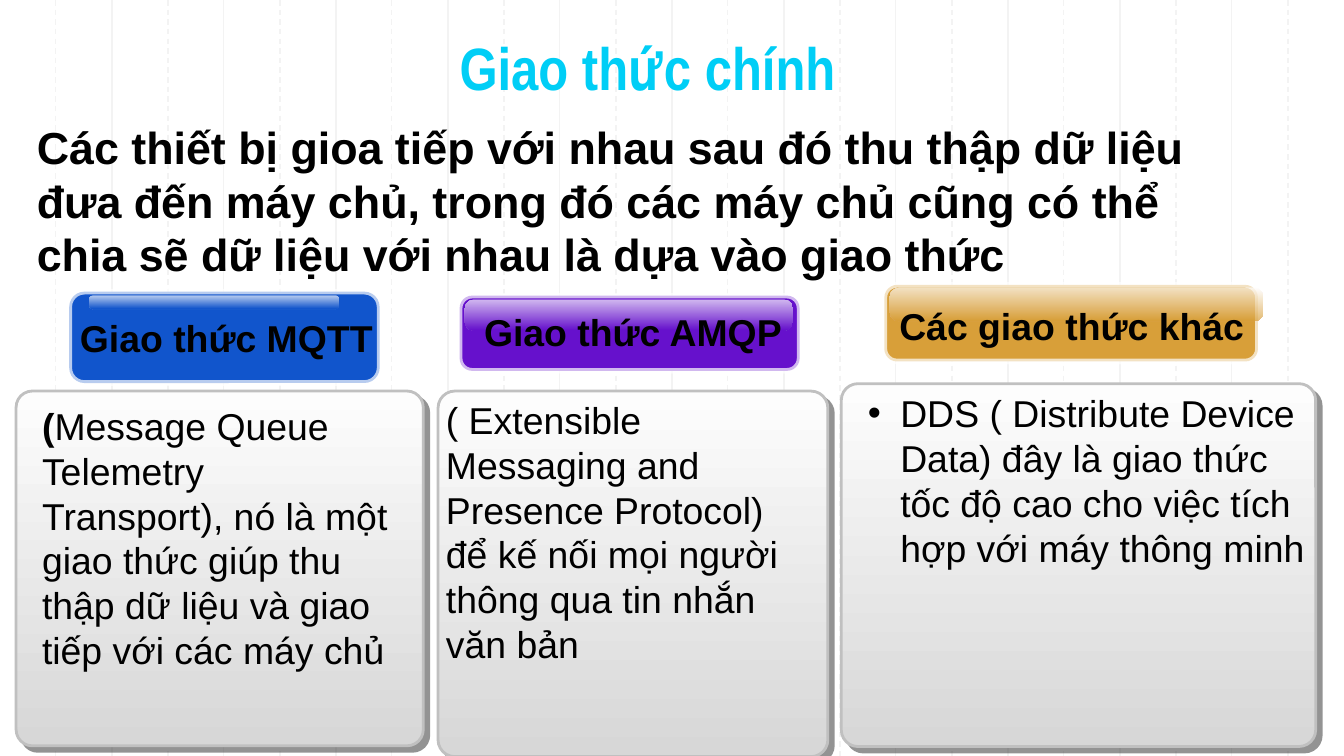
import pptx
import pptx.util
import pptx.dml.color
import pptx.enum.dml
import pptx.enum.shapes
import pptx.enum.text
import pptx.oxml
import pptx.oxml.ns
import lxml.etree

PX = 4572  # 200 px to the inch
W, H = 2000, 1125
GRID_STEPS = 24
BLACK = "000000"
ALIGN = pptx.enum.text.PP_ALIGN

# Cards are in slide px; button, gloss, label and body are relative to the card.
COLUMNS = [
    dict(card=(24, 582, 606, 528), color="1155CC",
         button=(79, -148, 462, 136), gloss=(109, -142, 372, 20),
         label=(70, -123, 486, 88), title="Giao thức MQTT",
         body=(19, 8, 560, 424),
         runs=[("(", True),
               ("Message Queue Telemetry Transport), nó là một giao thức giúp thu "
                "thập dữ liệu và giao tiếp với các máy chủ", False)]),
    dict(card=(652, 582, 580, 544), color="6611CC",
         button=(32, -142, 506, 112), gloss=(40, -136, 488, 46),
         label=(42, -132, 496, 88), title="Giao thức AMQP",
         body=(-8, -1, 580, 424),
         runs=[("( Extensible Messaging and Presence Protocol) để kế nối mọi người "
                "thông qua tin nhắn văn bản", False)]),
    dict(card=(1252, 571, 706, 540), color="D89F39",
         button=(64, -147, 556, 114), gloss=(72, -143, 556, 50),
         label=(64, -130, 558, 88), title="Các giao thức khác", wrap=False,
         body=(20, 0, 704, 390), bullet=True,
         runs=[("DDS ( Distribute Device Data) đây là giao thức tốc độ cao cho việc "
                "tích hợp với máy thông minh", False)]),
]


def rgb(value):
    return pptx.dml.color.RGBColor.from_string(value)


def emu(box):
    return [pptx.util.Emu(v * PX) for v in box]


def sub(parent, tag, **attrs):
    el = lxml.etree.SubElement(parent, pptx.oxml.ns.qn(tag))
    for name, value in attrs.items():
        el.set(name, str(value))
    return el


def set_opacity(parent, percent):
    """Apply an opacity to every RGB colour below parent."""
    for clr in parent.iter(pptx.oxml.ns.qn("a:srgbClr")):
        sub(clr, "a:alpha", val=percent * 1000)


def fill_gradient(sp, top, bottom):
    sp.fill.gradient()
    sp.fill.gradient_angle = 270
    for stop, color, position in zip(sp.fill.gradient_stops, (top, bottom), (0, 1)):
        stop.color.rgb = rgb(color)
        stop.position = position


def add_round_rect(slide, box, radius):
    sp = slide.shapes.add_shape(
        pptx.enum.shapes.MSO_SHAPE.ROUNDED_RECTANGLE, *emu(box))
    sp.adjustments[0] = radius
    sp.shadow.inherit = False
    return sp


def add_runs(p, runs, size, color=BLACK, font="Arial"):
    for text, bold in runs:
        r = p.add_run()
        r.text = text
        r.font.name = font
        r.font.size = pptx.util.Pt(size)
        r.font.bold = bold
        r.font.color.rgb = rgb(color)


def add_text(slide, box, runs, size, align=ALIGN.LEFT, wrap=True, bullet=False):
    tf = slide.shapes.add_textbox(*emu(box)).text_frame
    tf.word_wrap = wrap
    p = tf.paragraphs[0]
    p.alignment = align
    if bullet:
        pPr = p._p.get_or_add_pPr()
        pPr.set("marL", str(48 * PX))
        pPr.set("indent", str(-48 * PX))
        sub(pPr, "a:buFont", typeface="Arial")
        sub(pPr, "a:buChar", char="•")
    add_runs(p, runs, size)


def add_grid(slide):
    """Vertical background lines, solid and dashed in turn."""
    for i in range(1, GRID_STEPS):
        x = round(i * W / GRID_STEPS)
        line = slide.shapes.add_connector(
            pptx.enum.shapes.MSO_CONNECTOR.STRAIGHT, *emu((x, 0, x, H)))
        line.line.color.rgb = rgb("F3F3F3")
        line.line.width = pptx.util.Pt(0.75)
        if i % 2:
            line.line.dash_style = pptx.enum.dml.MSO_LINE.DASH
        sub(line._element.spPr, "a:effectLst")


def add_title(slide, box, text):
    title = slide.shapes.title
    slide.shapes._spTree.append(title._element)  # in front of the grid
    title.left, title.top, title.width, title.height = emu(box)
    tf = title.text_frame
    tf.auto_size = pptx.enum.text.MSO_AUTO_SIZE.NONE
    tf.vertical_anchor = pptx.enum.text.MSO_ANCHOR.BOTTOM
    tf.margin_left = tf.margin_top = tf.margin_right = tf.margin_bottom = 20 * PX
    tf.paragraphs[0].alignment = ALIGN.CENTER
    add_runs(tf.paragraphs[0], [(text, True)], 32, "00CEF6", "Arial Narrow")


def add_card(slide, box):
    card = add_round_rect(slide, box, 0.046)
    fill_gradient(card, "FDFDFD", "D7D7D7")
    card.line.color.rgb = rgb("C0C0C0")
    card.line.width = pptx.util.Pt(1.5)
    effects = card._element.spPr.find(pptx.oxml.ns.qn("a:effectLst"))
    shadow = sub(effects, "a:outerShdw", blurRad=0, dist=pptx.util.Pt(4.2),
                 dir=45 * 60000, algn="ctr", rotWithShape=0)
    sub(shadow, "a:srgbClr", val="292929")
    set_opacity(shadow, 50)


def add_button(slide, box, gloss_box, color):
    button = add_round_rect(slide, box, 0.167)
    button.fill.solid()
    button.fill.fore_color.rgb = rgb(color)
    button.line.color.rgb = rgb("FFFFFF")
    button.line.width = pptx.util.Pt(3)
    set_opacity(button.line._get_or_add_ln(), 70)

    gloss = add_round_rect(slide, gloss_box, 0.284)
    fill_gradient(gloss, "FFFFFF", color)
    gloss.line.fill.background()
    set_opacity(gloss._element.spPr, 70)


def add_column(slide, column):
    """One protocol: a card with its text, under a glossy heading button."""
    left, top = column["card"][:2]

    def inside(part):
        x, y, w, h = column[part]
        return left + x, top + y, w, h

    add_card(slide, column["card"])
    add_button(slide, inside("button"), inside("gloss"), column["color"])
    add_text(slide, inside("label"), [(column["title"], True)], 20,
             ALIGN.CENTER, wrap=column.get("wrap", True))
    add_text(slide, inside("body"), column["runs"], 20,
             bullet=column.get("bullet", False))


def main():
    prs = pptx.Presentation()
    prs.slide_width, prs.slide_height = emu((W, H))
    slide = prs.slides.add_slide(prs.slide_layouts[5])
    add_grid(slide)
    add_title(slide, (199, 16, 1530, 156), "Giao thức chính")
    for column in COLUMNS:
        add_column(slide, column)
    intro = ("Các thiết bị gioa tiếp với nhau sau đó thu thập dữ liệu đưa đến máy chủ, "
             "trong đó các máy chủ cũng có thể chia sẽ dữ liệu với nhau là dựa vào "
             "giao thức")
    add_text(slide, (35, 168, 1756, 262), [(intro, True)], 24)
    prs.save("out.pptx")


if __name__ == "__main__":
    main()
